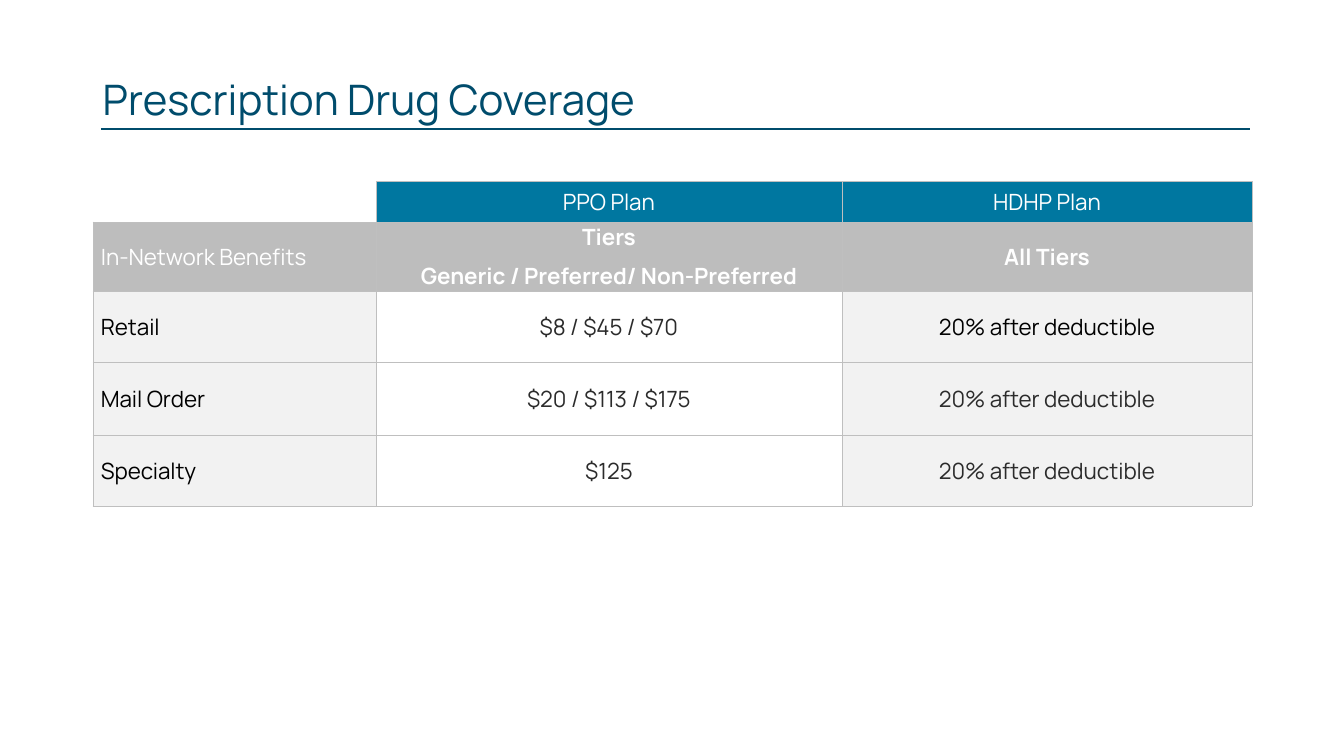
from dataclasses import dataclass

from lxml.etree import SubElement
from pptx import Presentation
from pptx.dml.color import RGBColor
from pptx.enum.shapes import MSO_CONNECTOR as Connector
from pptx.enum.text import MSO_ANCHOR as Anchor, PP_ALIGN as Align
from pptx.oxml.ns import qn
from pptx.util import Inches, Pt


@dataclass(frozen=True)
class Theme:
    font: str = "Manrope"
    title_size: float = 30
    body_size: float = 16
    rule_width: float = 1.5
    border_width: float = 0.25
    navy: str = "004C6C"
    blue: str = "0077A0"
    gray: str = "BDBDBD"
    pale: str = "F2F2F2"
    border: str = "BFBFBF"
    white: str = "FFFFFF"
    black: str = "000000"
    ink: str = "2B2B2B"


THEME = Theme()
COLUMN_WIDTHS = [2.81, 4.62, 4.07]
ROW_HEIGHTS = [0.4, 0.69, 0.7, 0.73, 0.7]
PLANS = ["", "PPO Plan", "HDHP Plan"]
TIERS = ["In-Network Benefits", "Tiers\nGeneric / Preferred/ Non-Preferred", "All Tiers"]
BENEFITS = [
    ["Retail", "$8 / $45 / $70", "20% after deductible"],
    ["Mail Order", "$20 / $113 / $175", "20% after deductible"],
    ["Specialty", "$125", "20% after deductible"],
]


def write_text(frame, text, *, size=THEME.body_size, color=THEME.black, bold=False,
               align=Align.LEFT, line_spacing=None, before=0, after=0):
    frame.word_wrap = True
    for index, line in enumerate(text.split("\n")):
        paragraph = frame.add_paragraph() if index else frame.paragraphs[0]
        paragraph.alignment = align
        paragraph.line_spacing = line_spacing
        paragraph.space_before = Pt(before if index else 0)
        paragraph.space_after = Pt(after)
        run = paragraph.add_run()
        run.text = line
        run.font.name = THEME.font
        run.font.size = Pt(size)
        run.font.bold = bold
        run.font.color.rgb = RGBColor.from_string(color)


def set_borders(cell, visible):
    properties = cell._tc.get_or_add_tcPr()
    for side in "LRTB":
        line = SubElement(properties, qn(f"a:ln{side}"), w=str(Pt(THEME.border_width)))
        if side in visible:
            fill = SubElement(line, qn("a:solidFill"))
            SubElement(fill, qn("a:srgbClr"), val=THEME.border)
        else:
            SubElement(line, qn("a:noFill"))


def add_title(slide, text, left, top, width, height):
    box = slide.shapes.add_textbox(Inches(left), Inches(top), Inches(width), Inches(height))
    box.text_frame.vertical_anchor = Anchor.MIDDLE
    write_text(box.text_frame, text, size=THEME.title_size, color=THEME.navy,
               line_spacing=0.9, after=6)
    bottom = Inches(top + height)
    rule = slide.shapes.add_connector(
        Connector.STRAIGHT, Inches(left + 0.08), bottom, Inches(left + 11.48), bottom)
    rule.line.color.rgb = RGBColor.from_string(THEME.navy)
    rule.line.width = Pt(THEME.rule_width)
    SubElement(rule._element.spPr, qn("a:effectLst"))


def cell_colors(row, column):
    if row == 0:
        return (THEME.blue if column else THEME.white), THEME.white
    if row == 1:
        return THEME.gray, THEME.white
    fill = THEME.white if column == 1 else THEME.pale
    dark = column == 0 or (row, column) == (2, 2)
    return fill, THEME.black if dark else THEME.ink


def add_coverage_table(slide, left, top):
    rows = [PLANS, TIERS, *BENEFITS]
    frame = slide.shapes.add_table(
        len(rows), len(PLANS), Inches(left), Inches(top),
        Inches(sum(COLUMN_WIDTHS)), Inches(sum(ROW_HEIGHTS)))
    table = frame.table
    table.first_row = False
    table.horz_banding = False
    for column, width in zip(table.columns, COLUMN_WIDTHS):
        column.width = Inches(width)
    for row, height in zip(table.rows, ROW_HEIGHTS):
        row.height = Inches(height)
    for row, texts in enumerate(rows):
        for column, text in enumerate(texts):
            cell = table.cell(row, column)
            fill, color = cell_colors(row, column)
            set_borders(cell, "LRTB" if row or column else "RB")
            cell.fill.solid()
            cell.fill.fore_color.rgb = RGBColor.from_string(fill)
            cell.vertical_anchor = Anchor.MIDDLE
            cell.margin_left = Inches(0 if column else 0.08)
            cell.margin_right = cell.margin_top = cell.margin_bottom = 0
            if text:
                write_text(cell.text_frame, text, color=color,
                           bold=row == 1 and column > 0, before=6,
                           align=Align.CENTER if column else Align.LEFT)


def main():
    presentation = Presentation()
    presentation.slide_width = Inches(13.33)
    presentation.slide_height = Inches(7.5)
    slide = presentation.slides.add_slide(presentation.slide_layouts[6])
    add_title(slide, "Prescription Drug Coverage", 0.92, 0.74, 9.48, 0.54)
    add_coverage_table(slide, 0.92, 1.8)
    presentation.save("out.pptx")


if __name__ == "__main__":
    main()
